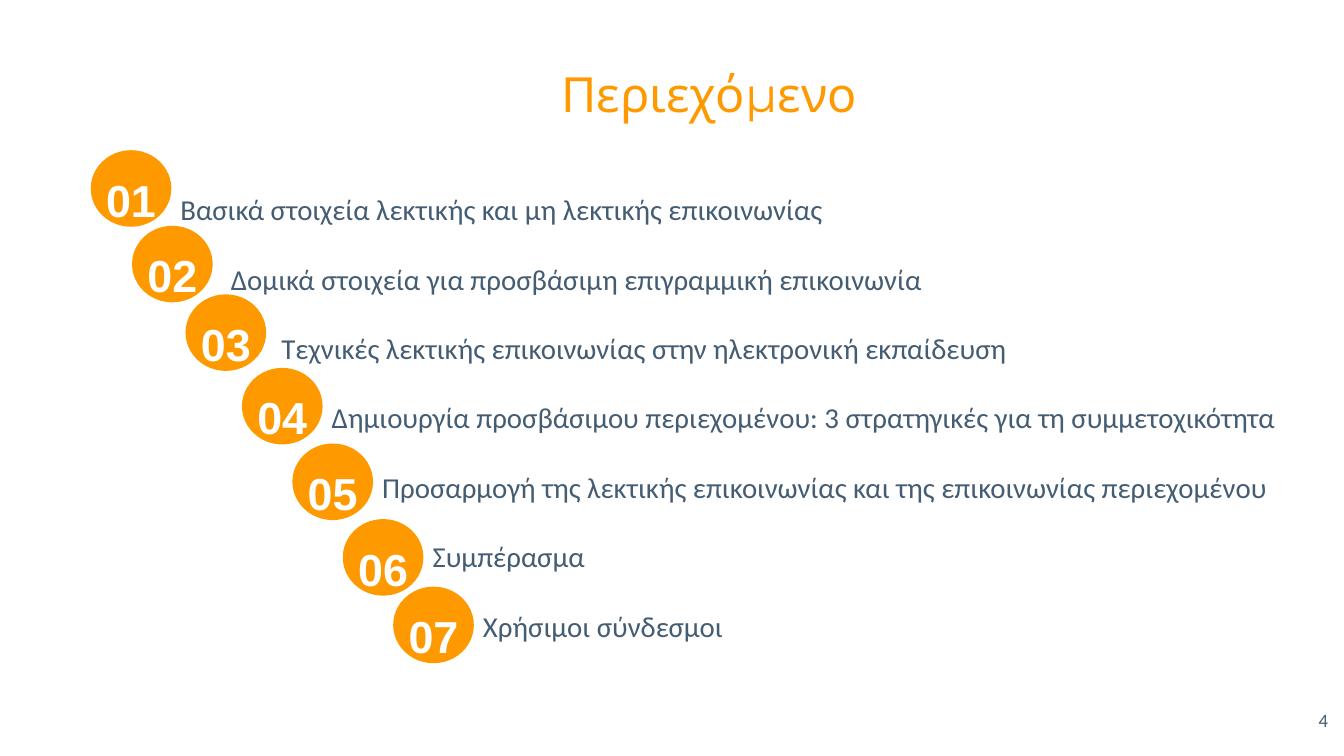
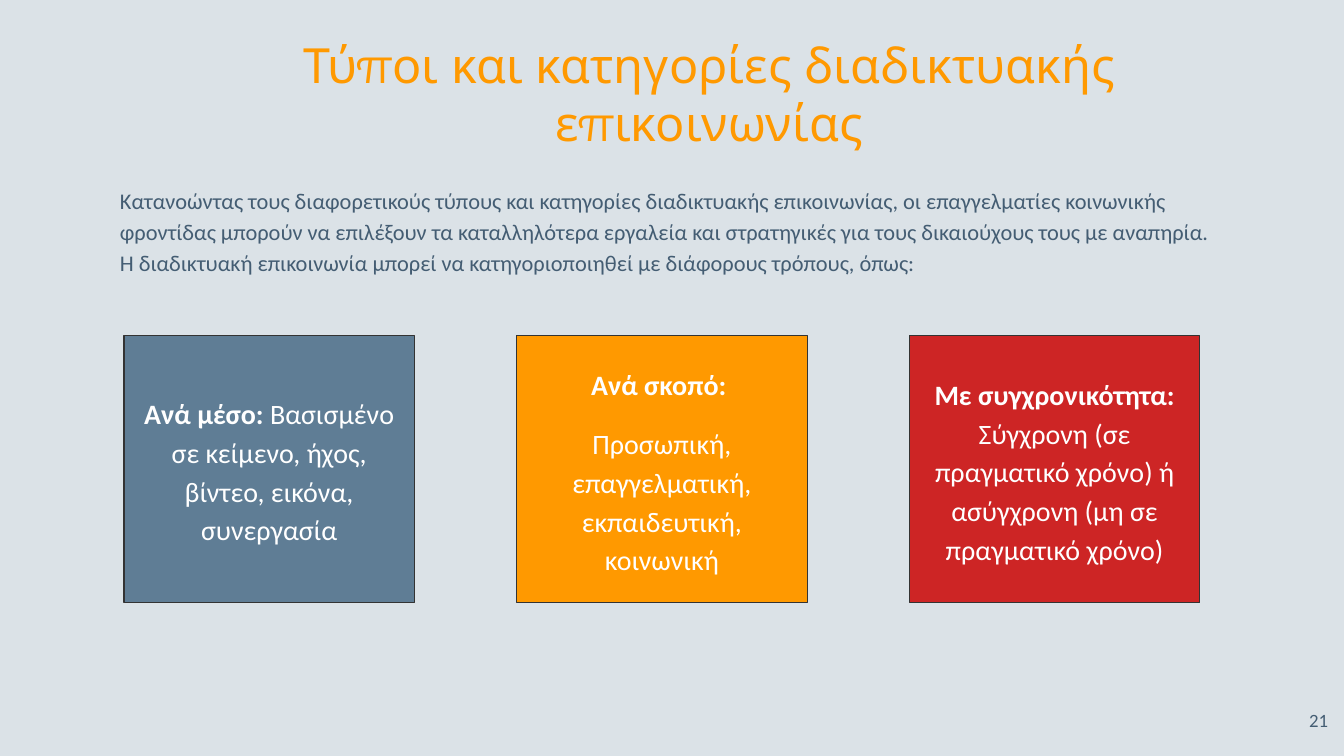
from pptx import Presentation
from pptx.dml.color import RGBColor
from pptx.enum.shapes import MSO_SHAPE as Preset
from pptx.enum.text import MSO_ANCHOR as Anchor, PP_ALIGN as Align
from pptx.util import Inches, Pt

ORANGE, SLATE, RED = "FF9900", "5F7D95", "CD2525"
INK, WHITE, PALE, OUTLINE = "445D73", "FFFFFF", "DBE2E7", "333333"
TITLE_FONT, BODY_FONT, NUMBER_FONT = "Montserrat", "Calibri", "Arial"

CONTENTS = [  # left and top of the numbered disc, topic
    (0.9, 1.49, "Βασικά στοιχεία λεκτικής και μη λεκτικής επικοινωνίας"),
    (1.31, 2.24, "Δομικά στοιχεία για προσβάσιμη επιγραμμική επικοινωνία"),
    (1.84, 2.92, "Τεχνικές λεκτικής επικοινωνίας στην ηλεκτρονική εκπαίδευση"),
    (2.4, 3.65, "Δημιουργία προσβάσιμου περιεχομένου: 3 στρατηγικές για τη συμμετοχικότητα"),
    (2.9, 4.4, "Προσαρμογή της λεκτικής επικοινωνίας και της επικοινωνίας περιεχομένου"),
    (3.4, 5.15, "Συμπέρασμα"),
    (3.9, 5.82, "Χρήσιμοι σύνδεσμοι"),
]
DISC_SIZE = (0.8, 0.76)
TOPIC_INDENT = 0.5

INTRO = (
    "Κατανοώντας τους διαφορετικούς τύπους και κατηγορίες διαδικτυακής επικοινωνίας, "
    "οι επαγγελματίες κοινωνικής φροντίδας μπορούν να επιλέξουν τα καταλληλότερα εργαλεία "
    "και στρατηγικές για τους δικαιούχους τους με αναπηρία. Η διαδικτυακή επικοινωνία "
    "μπορεί να κατηγοριοποιηθεί με διάφορους τρόπους, όπως:"
)
CATEGORIES = [  # fill, paragraphs of (text, bold) runs
    (SLATE, [[("Ανά μέσο: ", True),
              ("Βασισμένο σε κείμενο, ήχος, βίντεο, εικόνα, συνεργασία", False)]]),
    (ORANGE, [[("Ανά σκοπό: ", True)],
              [("Προσωπική, επαγγελματική, εκπαιδευτική, κοινωνική", False)]]),
    (RED, [[("Με συγχρονικότητα: ", True),
            ("Σύγχρονη (σε πραγματικό χρόνο) ή ασύγχρονη (μη σε πραγματικό χρόνο)", False)]]),
]
CARD_LEFT, CARD_TOP, CARD_WIDTH, CARD_HEIGHT = 1.23, 3.33, 2.88, 2.65
CARD_STEP = 3.895


def rgb(value):
    return RGBColor.from_string(value)


def write(shape, paragraphs, size, color, font=BODY_FONT, align=Align.LEFT,
          anchor=Anchor.TOP, inset=0.14, spacing=1, gap=0, indent=0, wrap=True):
    """Fill a shape with paragraphs of (text, bold) runs; each one is indented a step more."""
    frame = shape.text_frame
    frame.word_wrap = wrap
    frame.vertical_anchor = anchor
    frame.margin_left = frame.margin_right = Inches(inset)
    frame.margin_top = frame.margin_bottom = Inches(inset)
    for index, runs in enumerate(paragraphs):
        para = frame.add_paragraph() if index else frame.paragraphs[0]
        para.alignment = align
        para.line_spacing = float(spacing)
        if index and gap:
            para.space_before = Pt(gap)
        if index and indent:
            para._p.get_or_add_pPr().set("marL", str(Inches(index * indent)))
        for text, bold in runs:
            span = para.add_run()
            span.text = text
            span.font.name = font
            span.font.size = Pt(size)
            span.font.bold = bold
            span.font.color.rgb = rgb(color)


def add_text(page, place, paragraphs, size, color, **style):
    box = page.shapes.add_textbox(*map(Inches, place))
    write(box, paragraphs, size, color, **style)


def add_filled(page, preset, place, fill, line=None):
    shape = page.shapes.add_shape(preset, *map(Inches, place))
    shape.shadow.inherit = False
    shape.fill.solid()
    shape.fill.fore_color.rgb = rgb(fill)
    if line:
        shape.line.color.rgb = rgb(line)
        shape.line.width = Pt(0.75)
    else:
        shape.line.fill.background()
    return shape


def add_page(deck, title, number, background):
    page = deck.slides.add_slide(deck.slide_layouts[6])
    page.background.fill.solid()
    page.background.fill.fore_color.rgb = rgb(background)
    add_text(page, (1.7, 0.51, 10.67, 0.83), [[(title, False)]], 34.67, ORANGE,
             font=TITLE_FONT, align=Align.CENTER, anchor=Anchor.MIDDLE)
    add_text(page, (12.47, 6.93, 0.8, 0.57), [[(number, False)]], 13.33, INK,
             align=Align.RIGHT, inset=0.1)
    return page


def build_contents(deck):
    page = add_page(deck, "Περιεχόμενο", "4", WHITE)
    topics = [[(topic, False)] for _, _, topic in CONTENTS]
    add_text(page, (1.65, 1.42, 11.81, 0.76), topics, 20.67, INK,
             spacing=2, indent=TOPIC_INDENT)
    for number, (left, top, _) in enumerate(CONTENTS, 1):
        disc = add_filled(page, Preset.OVAL, (left, top, *DISC_SIZE), ORANGE)
        write(disc, [[(f"{number:02}", True)]], 32, WHITE, font=NUMBER_FONT,
              align=Align.CENTER, anchor=Anchor.MIDDLE, inset=0, spacing=1.4, wrap=False)


def build_categories(deck):
    page = add_page(deck, "Τύποι και κατηγορίες διαδικτυακής επικοινωνίας", "21", PALE)
    add_text(page, (1.05, 1.68, 11.23, 0.76), [[(INTRO, False)]], 16, INK, spacing=1.15)
    for index, (fill, paragraphs) in enumerate(CATEGORIES):
        place = (CARD_LEFT + index * CARD_STEP, CARD_TOP, CARD_WIDTH, CARD_HEIGHT)
        card = add_filled(page, Preset.RECTANGLE, place, fill, OUTLINE)
        write(card, paragraphs, 20, WHITE, align=Align.CENTER, anchor=Anchor.MIDDLE,
              inset=0.1, spacing=1.15, gap=15)


def main():
    deck = Presentation()
    deck.slide_width, deck.slide_height = Inches(13.33), Inches(7.5)
    build_contents(deck)
    build_categories(deck)
    deck.save("out.pptx")


if __name__ == "__main__":
    main()
